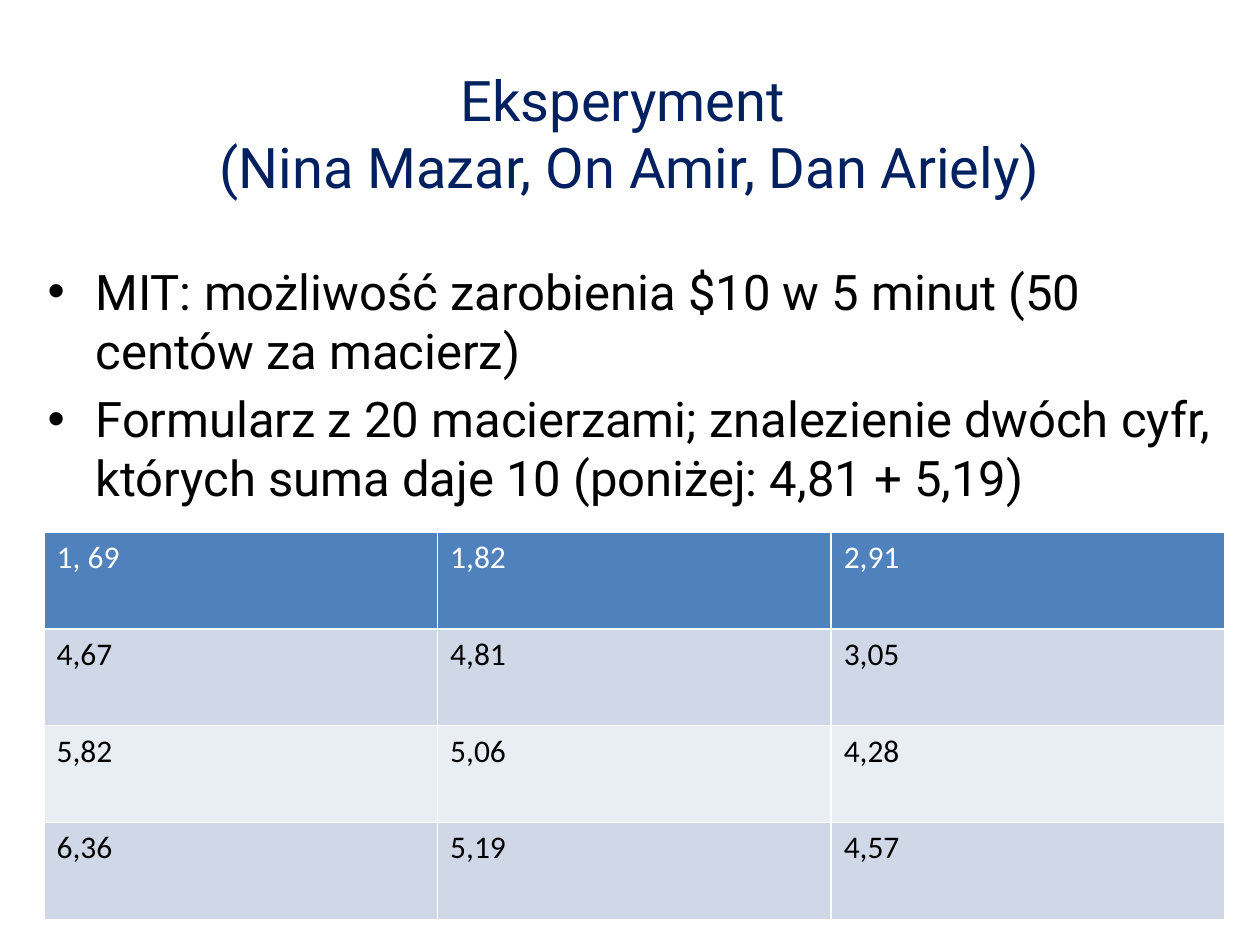
from lxml.etree import SubElement
from pptx import Presentation
from pptx.dml.color import RGBColor
from pptx.enum.text import MSO_ANCHOR, MSO_AUTO_SIZE, PP_ALIGN
from pptx.oxml.ns import qn
from pptx.util import Inches, Pt

NAVY = RGBColor(0x00, 0x20, 0x60)
BLACK = RGBColor(0x00, 0x00, 0x00)
WHITE = RGBColor(0xFF, 0xFF, 0xFF)
BLUE = RGBColor(0x4F, 0x81, 0xBD)
BANDS = [RGBColor(0xE9, 0xED, 0xF4), RGBColor(0xD0, 0xD8, 0xE8)]

TITLE = "Eksperyment \v(Nina Mazar, On Amir, Dan Ariely)"
POINTS = [
    "MIT: możliwość zarobienia $10 w 5 minut (50 centów za macierz)",
    "Formularz z 20 macierzami; znalezienie dwóch cyfr, "
    "których suma daje 10 (poniżej: 4,81 + 5,19)",
]
MATRIX = [
    ["1, 69", "1,82", "2,91"],
    ["4,67", "4,81", "3,05"],
    ["5,82", "5,06", "4,28"],
    ["6,36", "5,19", "4,57"],
]


def style(para, name, size, color):
    para.font.name = name
    para.font.size = Pt(size)
    para.font.bold = False
    para.font.color.rgb = color


def add_title(slide, box):
    title = slide.shapes.title
    title.left, title.top, title.width, title.height = box
    frame = title.text_frame
    frame.text = TITLE
    frame.auto_size = MSO_AUTO_SIZE.NONE
    frame.vertical_anchor = MSO_ANCHOR.MIDDLE
    para = frame.paragraphs[0]
    para.alignment = PP_ALIGN.CENTER
    style(para, "Roboto", 32, NAVY)


def add_points(slide, box):
    frame = slide.shapes.add_textbox(*box).text_frame
    frame.word_wrap = True
    for i, point in enumerate(POINTS):
        para = frame.add_paragraph() if i else frame.paragraphs[0]
        para.text = point
        para.space_before = Pt(5.6)
        style(para, "Roboto", 28, BLACK)
        props = para._p.get_or_add_pPr()
        indent = Inches(0.38)
        props.set("marL", str(indent))
        props.set("indent", str(-indent))
        font = SubElement(props, qn("a:buFont"), typeface="Arial")
        font.addnext(SubElement(props, qn("a:buChar"), char="•"))
        # Bullet marks must precede the paragraph's default run properties.
        props.append(props.find(qn("a:defRPr")))


def add_matrix(slide, box):
    """Fill the box with an even grid; the table style draws its white rules."""
    grid = slide.shapes.add_table(len(MATRIX), len(MATRIX[0]), *box).table
    for r, row in enumerate(MATRIX):
        for c, value in enumerate(row):
            cell = grid.cell(r, c)
            cell.text = value
            cell.fill.solid()
            cell.fill.fore_color.rgb = BANDS[r % 2] if r else BLUE
            style(cell.text_frame.paragraphs[0], "Calibri", 18,
                  BLACK if r else WHITE)


def main():
    deck = Presentation()
    deck.slide_width, deck.slide_height = Inches(10), Inches(7.5)
    slide = deck.slides.add_slide(deck.slide_layouts[5])

    def share(*parts):
        sides = (deck.slide_width, deck.slide_height) * 2
        return [round(side * part) for side, part in zip(sides, parts)]

    add_title(slide, share(0.05, 0.04, 0.9, 0.2))
    add_points(slide, share(0.028, 0.27, 0.953, 0.68))
    add_matrix(slide, share(0.035, 0.563, 0.937, 0.41))
    deck.save("out.pptx")


if __name__ == "__main__":
    main()
